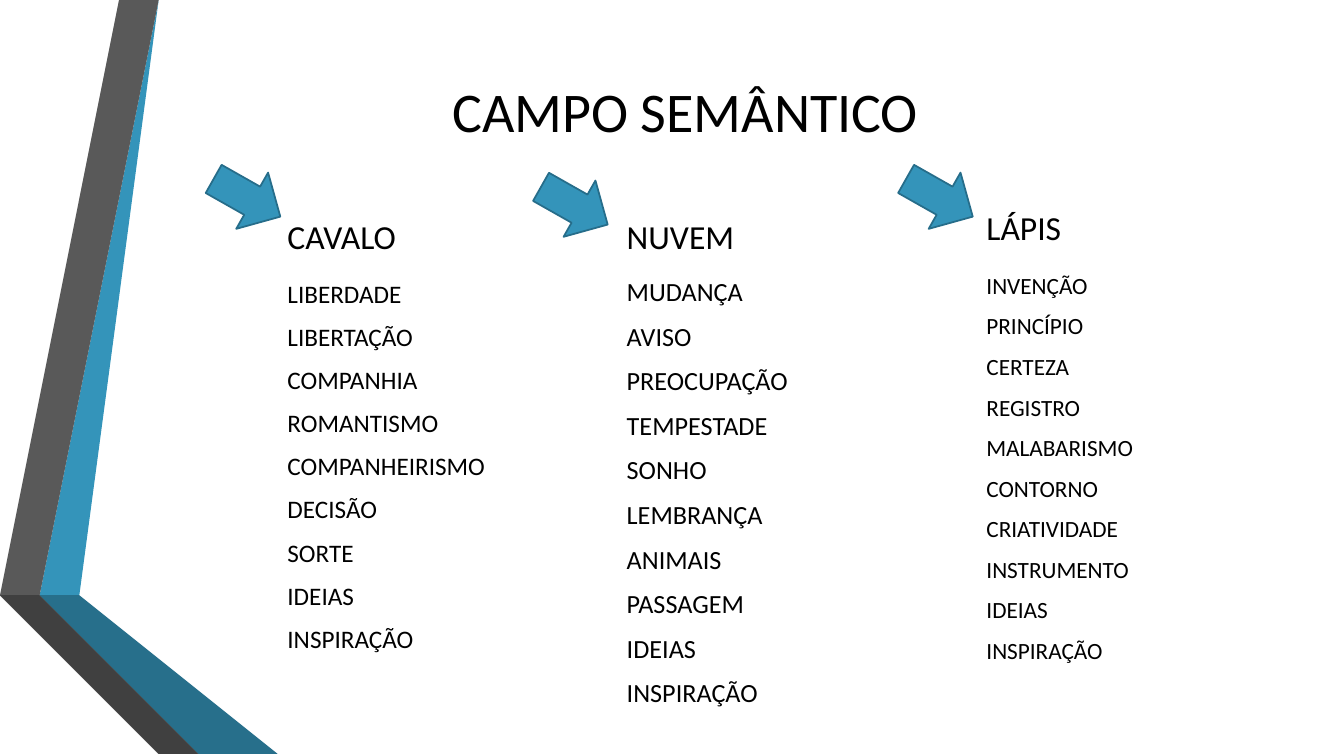
from lxml.etree import SubElement as Sub
from pptx import Presentation
from pptx.dml.color import RGBColor as Rgb
from pptx.enum.shapes import MSO_SHAPE as Kind
from pptx.enum.text import MSO_ANCHOR as Anchor, MSO_AUTO_SIZE as Fit, PP_ALIGN as Align
from pptx.oxml.ns import qn
from pptx.util import Cm, Pt

HUES = {
    "text": "000000", "blue": "3494BA", "edge": "266D8A", "teal": "276F8B",
    "navy": "1A4A5D", "gray": "595959", "dark": "404040", "black": "262626",
}

BANDS = [
    ("blue", [(1.27, 14.68), (1.96, 14.81), (4.39, 0), (3.68, 0)]),
    ("gray", [(3.53, 0), (2.82, 0), (0.41, 14.55), (1.12, 14.66)]),
    ("black", [(0.41, 14.55), (3.68, 19.05), (3.84, 19.05)]),
    ("navy", [(1.27, 14.71), (5.28, 19.05), (5.44, 19.05)]),
    ("teal", [(1.27, 14.71), (5.44, 19.05), (7.19, 19.05), (1.96, 14.81), (1.27, 14.68)]),
    ("dark", [(5.13, 19.05), (1.22, 14.81), (1.09, 14.68), (1.12, 14.66),
              (0.41, 14.55), (3.84, 19.05)]),
]

COLUMNS = [
    {"head": "CAVALO", "size": 18, "ids": (1, 2), "arrow": (5.26, 4.17),
     "top": (6.99, 4.7, 4.17, 1.9), "list": (6.99, 6.88, 6.71, 10.19),
     "words": ["LIBERDADE", "LIBERTAÇÃO", "COMPANHIA", "ROMANTISMO", "COMPANHEIRISMO",
               "DECISÃO", "SORTE", "IDEIAS", "INSPIRAÇÃO"]},
    {"head": "NUVEM", "size": 18.7, "ids": (3, 4), "arrow": (13.51, 4.37),
     "top": (15.54, 4.7, 3.86, 1.9), "list": (15.54, 6.81, 6.43, 10.95),
     "words": ["MUDANÇA", "AVISO", "PREOCUPAÇÃO", "TEMPESTADE", "SONHO", "LEMBRANÇA",
               "ANIMAIS", "PASSAGEM", "IDEIAS", "INSPIRAÇÃO"]},
    {"head": "LÁPIS", "size": 16.6, "ids": (None, None), "arrow": (22.71, 4.17),
     "top": (24.61, 4.47, 3.86, 1.9), "list": (24.61, 6.71, 5.54, 10.57),
     "words": ["INVENÇÃO", "PRINCÍPIO", "CERTEZA", "REGISTRO", "MALABARISMO", "CONTORNO",
               "CRIATIVIDADE", "INSTRUMENTO", "IDEIAS", "INSPIRAÇÃO"]},
]


def apply(item, values):
    for name, value in values.items():
        setattr(item, name, value)


class Page:
    font = "Calibri"

    def __init__(self, slide):
        self.slide = slide
        self.slots = {s.placeholder_format.idx: s for s in slide.placeholders}

    def paint(self, shape, fill, edge=None):
        shape.shadow.inherit = False
        shape.fill.solid()
        shape.fill.fore_color.rgb = Rgb.from_string(HUES[fill])
        if edge:
            shape.line.color.rgb = Rgb.from_string(HUES[edge])
            shape.line.width = Pt(1.25)
        else:
            shape.line.fill.background()

    def band(self, hue, points):
        path = self.slide.shapes.build_freeform(*points[0], scale=Cm(1))
        path.add_line_segments(points[1:], close=True)
        self.paint(path.convert_to_shape(), hue)

    def arrow(self, left, top):
        shape = self.slide.shapes.add_shape(
            Kind.RIGHT_ARROW, Cm(left), Cm(top), Cm(1.93), Cm(1.63))
        shape.rotation = 29.5
        self.paint(shape, "blue", "edge")

    def text(self, slot, place, lines, size, anchor=Anchor.TOP, **style):
        box = [Cm(n) for n in place]
        shape = self.slots.get(slot) or self.slide.shapes.add_textbox(*box)
        apply(shape, dict(zip(("left", "top", "width", "height"), box)))
        frame = shape.text_frame
        frame.text = "\n".join(lines)
        apply(frame, {"word_wrap": True, "auto_size": Fit.NONE, "vertical_anchor": anchor})
        look = {"name": self.font, "size": Pt(size), "bold": False}
        for i, para in enumerate(frame.paragraphs):
            props = para._p.get_or_add_pPr()
            apply_xml = {"marL": "0", "indent": "0"}
            for key, value in apply_xml.items():
                props.set(key, value)
            Sub(props, qn("a:buNone"))
            form = {"alignment": Align.LEFT, "line_spacing": 1.0, "space_after": Pt(6),
                    "space_before": Pt(round(size * 0.18, 1) if i else 0)}
            apply(para, {**form, **style})
            font = para.runs[0].font
            apply(font, look)
            font.color.rgb = Rgb.from_string(HUES["text"])


def main():
    deck = Presentation()
    apply(deck, {"slide_width": Cm(33.87), "slide_height": Cm(19.05)})
    page = Page(deck.slides.add_slide(deck.slide_layouts.get_by_name("Comparison")))
    for hue, points in BANDS:
        page.band(hue, points)
    page.text(0, (8.94, 0.13, 14.45, 5.28), ["CAMPO SEMÂNTICO"], 40, Anchor.MIDDLE,
              alignment=Align.RIGHT, space_after=Pt(0))
    for col in COLUMNS:
        head, body = col["ids"]
        page.text(head, col["top"], [col["head"]], 24, Anchor.BOTTOM, line_spacing=0.9)
        page.text(body, col["list"], col["words"], col["size"])
        page.arrow(*col["arrow"])
    deck.save("out.pptx")


if __name__ == "__main__":
    main()
